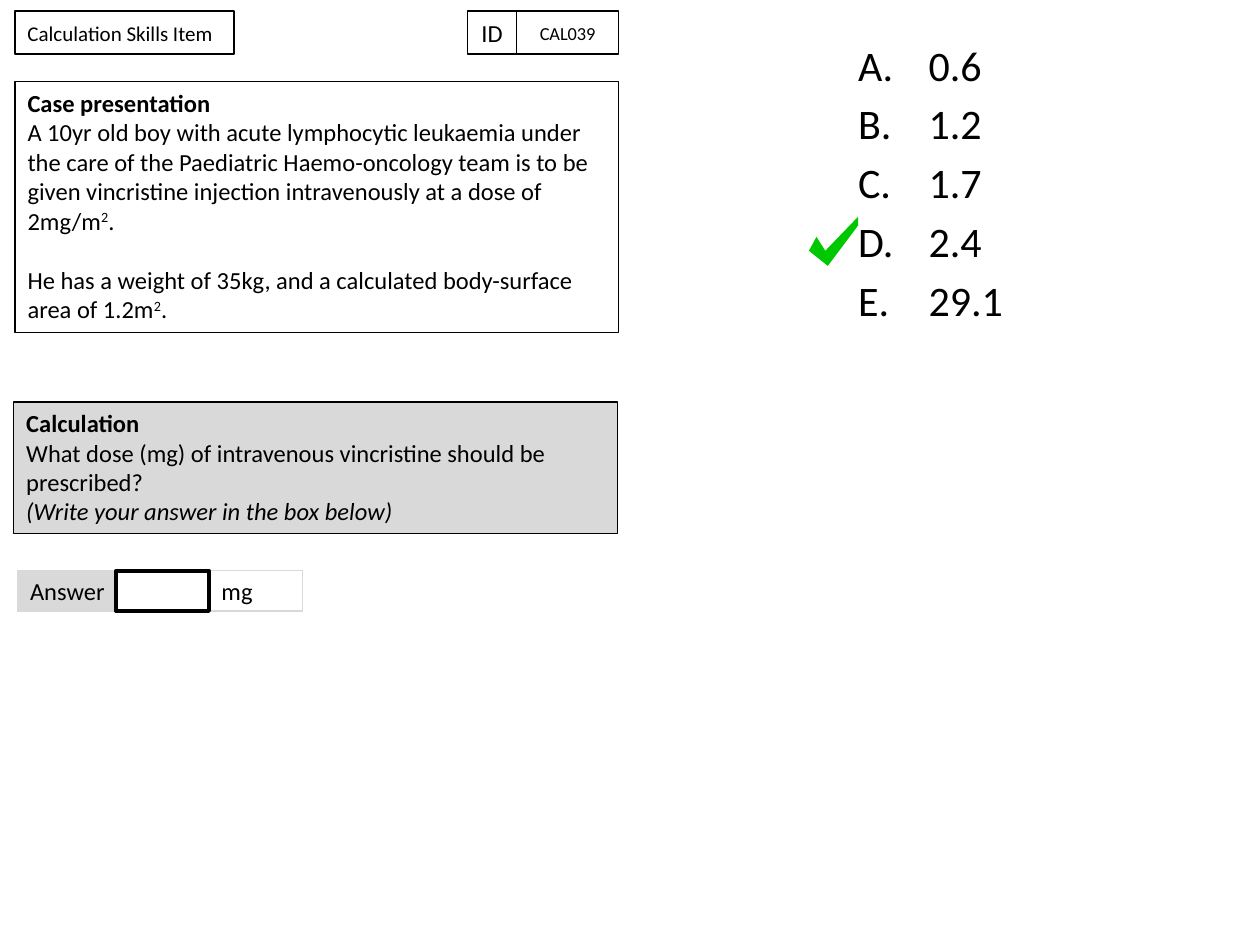
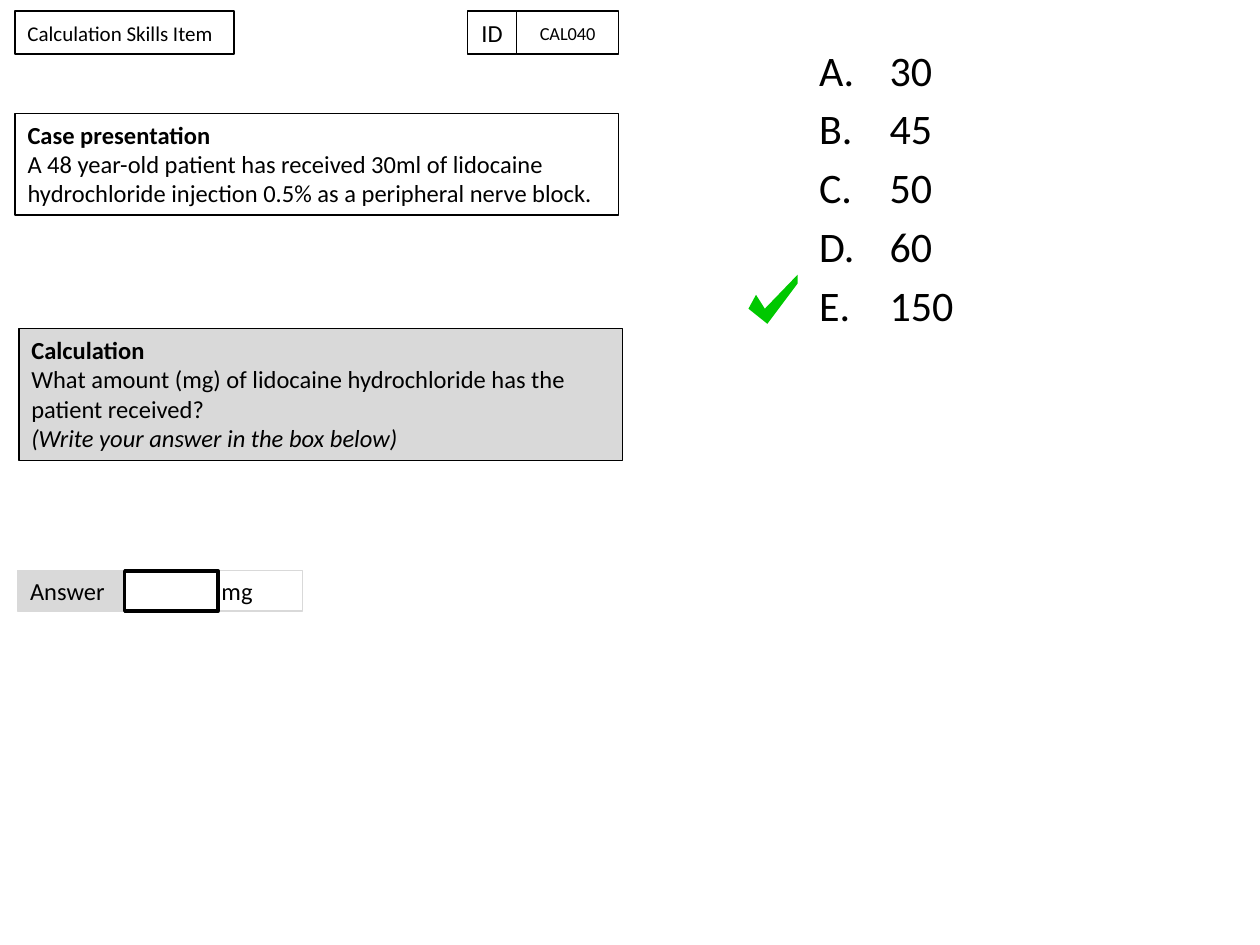
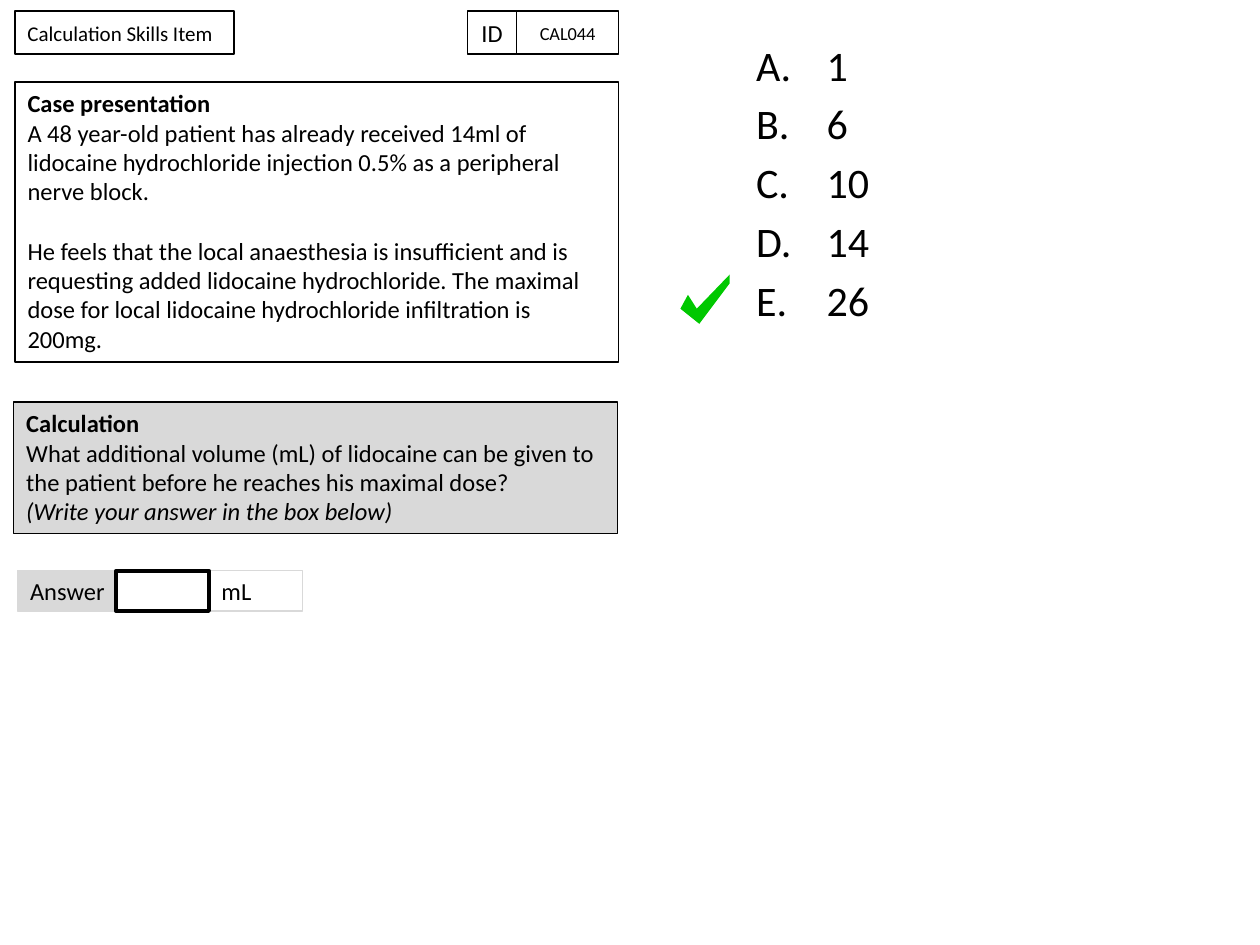
from dataclasses import dataclass

from lxml import etree
from pptx import Presentation
from pptx.dml.color import RGBColor
from pptx.enum.shapes import MSO_SHAPE
from pptx.enum.text import MSO_ANCHOR, MSO_AUTO_SIZE, PP_ALIGN
from pptx.oxml.ns import qn
from pptx.util import Inches, Pt

RECTANGLE = MSO_SHAPE.RECTANGLE
TOP, MIDDLE = MSO_ANCHOR.TOP, MSO_ANCHOR.MIDDLE
LEFT, CENTER = PP_ALIGN.LEFT, PP_ALIGN.CENTER
NO_AUTOFIT, GROW = MSO_AUTO_SIZE.NONE, MSO_AUTO_SIZE.SHAPE_TO_FIT_TEXT

SLIDE_WIDTH, SLIDE_HEIGHT = Inches(10), Inches(7.5)
COLUMN, ROW = SLIDE_WIDTH // 100, SLIDE_HEIGHT // 75
FONT = "Calibri"
COLORS = {"ink": "000000", "paper": "FFFFFF", "shade": "D9D9D9", "tick": "00C800"}

PANEL_WIDTH = 47.9
LINE_ROWS, PADDING_ROWS = 2.36, 1
PARAGRAPH_GAP = Pt(17)
HEADER_TOP, HEADER_ROWS = 0.9, 3.4
ANSWER_TOP, ANSWER_ROWS = 45.3, 3.2
TICK_OUTLINE = [(0.6, 1.6), (0, 2.7), (1.5, 3.9), (3.9, 0.7), (3.9, 0), (1.3, 2.7)]


@dataclass(frozen=True)
class Area:
    left: float
    top: float
    columns: float
    rows: float

    def emu(self) -> tuple[int, int, int, int]:
        return (round(self.left * COLUMN), round(self.top * ROW),
                round(self.columns * COLUMN), round(self.rows * ROW))


@dataclass(frozen=True)
class Box:
    area: Area
    text: str = ""
    size: float = 14
    fill: str | None = None
    line: str = "ink"
    weight: float = 0.75
    align: PP_ALIGN = LEFT


@dataclass(frozen=True)
class Question:
    code: str
    case: list[str]
    case_top: float
    case_lines: int
    task: str
    task_at: tuple[float, float]
    unit: str
    field_left: float
    choices: list[str]
    choices_at: tuple[float, float]
    tick_at: tuple[float, float]


QUESTIONS = [
    Question(
        "CAL039",
        ["A 10yr old boy with acute lymphocytic leukaemia under the care of the "
         "Paediatric Haemo-oncology team is to be given vincristine injection "
         "intravenously at a dose of 2mg/m^2^.",
         "He has a weight of 35kg, and a calculated body-surface area of 1.2m^2^."],
        6.5, 8,
        "What dose (mg) of intravenous vincristine should be prescribed?",
        (1.1, 31.9), "mg", 9.2,
        ["0.6", "1.2", "1.7", "2.4", "29.1"], (67.1, 2.6), (64.2, 17.2)),
    Question(
        "CAL040",
        ["A 48 year-old patient has received 30ml of lidocaine hydrochloride "
         "injection 0.5% as a peripheral nerve block."],
        9, 3,
        "What amount (mg) of lidocaine hydrochloride has the patient received?",
        (1.5, 26.1), "mg", 9.9,
        ["30", "45", "50", "60", "150"], (64, 3), (59.4, 21.8)),
    Question(
        "CAL044",
        ["A 48 year-old patient has already received 14ml of lidocaine "
         "hydrochloride injection 0.5% as a peripheral nerve block.",
         "He feels that the local anaesthesia is insufficient and is requesting "
         "added lidocaine hydrochloride. The maximal dose for local lidocaine "
         "hydrochloride infiltration is 200mg."],
        6.5, 9,
        "What additional volume (mL) of lidocaine can be given to the patient "
        "before he reaches his maximal dose?",
        (1.1, 31.9), "mL", 9.2,
        ["1", "6", "10", "14", "26"], (59, 2.6), (54, 21.8)),
]


def color(name: str) -> RGBColor:
    return RGBColor.from_string(COLORS[name])


def format_runs(paragraph, size: float, bold: bool = False, italic: bool = False) -> None:
    for run in paragraph.runs:
        run.font.name = FONT
        run.font.size = Pt(size)
        run.font.bold = bold
        run.font.italic = italic
        run.font.color.rgb = color("ink")


def draw_box(slide, box: Box):
    shape = slide.shapes.add_shape(RECTANGLE, *box.area.emu())
    shape.shadow.inherit = False
    if box.fill:
        shape.fill.solid()
        shape.fill.fore_color.rgb = color(box.fill)
    else:
        shape.fill.background()
    shape.line.color.rgb = color(box.line)
    shape.line.width = Pt(box.weight)
    frame = shape.text_frame
    frame.vertical_anchor = MIDDLE
    if box.text:
        frame.text = box.text
        frame.paragraphs[0].alignment = box.align
        format_runs(frame.paragraphs[0], box.size)
    return shape


def add_line(frame, text: str, italic: bool = False):
    paragraph = frame.add_paragraph()
    paragraph.alignment = LEFT
    for position, part in enumerate(text.split("^")):
        run = paragraph.add_run()
        run.text = part
        if position % 2:
            run.font._element.set("baseline", "30000")
    format_runs(paragraph, 14, italic=italic)
    return paragraph


def draw_panel(slide, heading: str, at: tuple[float, float], lines: int,
               fill: str | None = None):
    area = Area(*at, PANEL_WIDTH, PADDING_ROWS + LINE_ROWS * lines)
    frame = draw_box(slide, Box(area, heading, fill=fill)).text_frame
    frame.vertical_anchor = TOP
    frame.auto_size = GROW
    format_runs(frame.paragraphs[0], 14, bold=True)
    return frame


def draw_choices(slide, question: Question) -> None:
    body = slide.placeholders[1]
    body.left, body.top, body.width, body.height = Area(*question.choices_at, 33, 64).emu()
    frame = body.text_frame
    frame.auto_size = NO_AUTOFIT
    frame.text = "\n".join(question.choices)
    for paragraph in frame.paragraphs:
        format_runs(paragraph, 24)
        properties = paragraph._p.get_or_add_pPr()
        properties.set("marL", str(Inches(0.56)))
        properties.set("indent", str(-Inches(0.56)))
        numbering = etree.SubElement(properties, qn("a:buFont"))
        numbering.set("typeface", "+mj-lt")
        etree.SubElement(properties, qn("a:buAutoNum")).set("type", "alphaUcPeriod")


def draw_tick(slide, at: tuple[float, float]) -> None:
    points = [(round((at[0] + x) * COLUMN), round((at[1] + y) * ROW))
              for x, y in TICK_OUTLINE]
    builder = slide.shapes.build_freeform(*points[0])
    builder.add_line_segments(points[1:], close=True)
    tick = builder.convert_to_shape()
    tick.shadow.inherit = False
    tick.fill.solid()
    tick.fill.fore_color.rgb = color("tick")
    tick.line.fill.background()


def draw_header(slide, code: str) -> None:
    for left, columns, text, size, fill, align in (
        (1.2, 17.4, "Calculation Skills Item", 12, "paper", LEFT),
        (41, 8.1, code, 10.5, "paper", CENTER),
        (37.1, 3.9, "ID", 14, None, CENTER),
    ):
        area = Area(left, HEADER_TOP, columns, HEADER_ROWS)
        draw_box(slide, Box(area, text, size, fill, weight=1, align=align))


def draw_answer(slide, question: Question) -> None:
    for left, columns, text, fill, line, weight in (
        (1.4, 8.7, "Answer", "shade", "shade", 0.75),
        (16.6, 7.4, question.unit, None, "shade", 0.75),
        (question.field_left, 7.4, "", "paper", "ink", 2),
    ):
        area = Area(left, ANSWER_TOP, columns, ANSWER_ROWS)
        draw_box(slide, Box(area, text, fill=fill, line=line, weight=weight))


def draw_question(presentation, question: Question) -> None:
    slide = presentation.slides.add_slide(presentation.slide_layouts[1])
    title = slide.shapes.title._element
    title.getparent().remove(title)
    draw_choices(slide, question)
    draw_header(slide, question.code)

    case = draw_panel(slide, "Case presentation", (1.2, question.case_top),
                      question.case_lines)
    for position, text in enumerate(question.case):
        paragraph = add_line(case, text)
        if position:
            paragraph.space_before = PARAGRAPH_GAP

    task = draw_panel(slide, "Calculation", question.task_at, 4, "shade")
    add_line(task, question.task)
    add_line(task, "(Write your answer in the box below)", italic=True)

    draw_answer(slide, question)
    draw_tick(slide, question.tick_at)


def main() -> None:
    presentation = Presentation()
    presentation.slide_width, presentation.slide_height = SLIDE_WIDTH, SLIDE_HEIGHT
    for question in QUESTIONS:
        draw_question(presentation, question)
    presentation.save("out.pptx")


if __name__ == "__main__":
    main()
